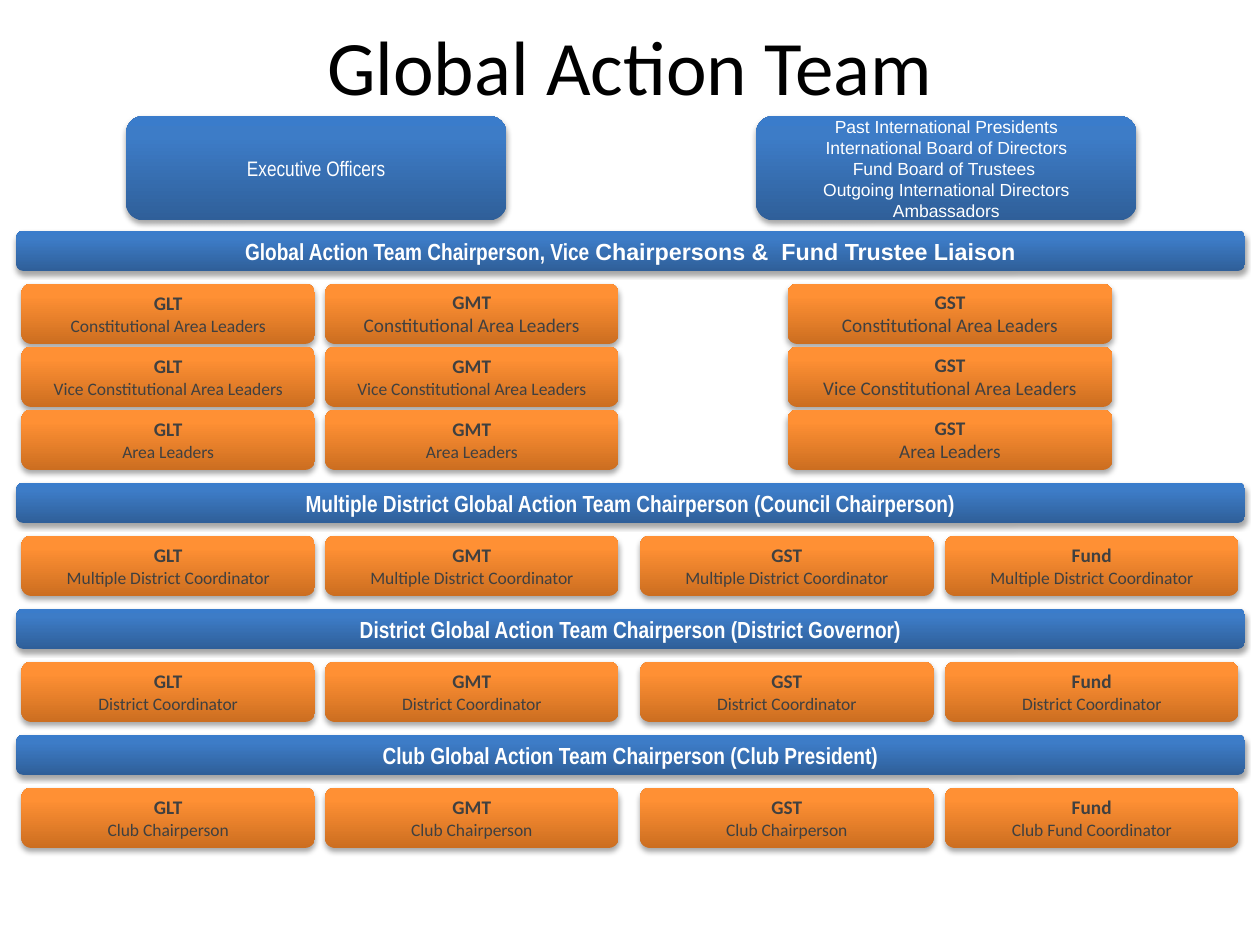
import copy

import pptx
import pptx.dml.color
import pptx.enum.shapes
import pptx.enum.text
import pptx.oxml
import pptx.oxml.ns
import pptx.util
from pptx.dml.color import RGBColor
from pptx.util import Inches

TITLE = "Global Action Team"
OFFICERS = ["Executive Officers"]
ADVISORS = [
    "Past International Presidents",
    "International Board of Directors",
    "Fund Board of Trustees ",
    "Outgoing International Directors",
    "Ambassadors",
]
AREA_TEAMS = ["GLT", "GMT", "GST"]
DISTRICT_TEAMS = ["GLT", "GMT", "GST", "Fund"]
SECTIONS = [
    {
        "chair": [("Global Action Team Chairperson, Vice ", "Arial Narrow"),
                  ("Chairpersons &  Fund Trustee Liaison", "Arial")],
        "teams": AREA_TEAMS,
        "columns": [(0.17, 2.33), (2.58, 2.33), (6.25, 2.58)],
        "rows": [
            (["Constitutional Area Leaders"] * 3, [10, 11, 11]),
            (["Vice Constitutional Area Leaders"] * 3, [10, 10, 11]),
            (["Area Leaders"] * 3, [10, 10, 11]),
        ],
    },
]
DISTRICT_COLUMNS = [(left, 2.33) for left in (0.17, 2.58, 5.08, 7.5)]
for chair, roles in [
    ("Multiple District Global Action Team Chairperson (Council Chairperson)",
     ["Multiple District Coordinator"] * 4),
    ("District Global Action Team Chairperson (District Governor)",
     ["District Coordinator"] * 4),
    ("Club Global Action Team Chairperson (Club President)",
     ["Club Chairperson"] * 3 + ["Club Fund Coordinator"]),
]:
    SECTIONS.append({
        "chair": [(chair, "Arial Narrow")],
        "teams": DISTRICT_TEAMS,
        "columns": DISTRICT_COLUMNS,
        "rows": [(roles, [10] * 4)],
    })

BLACK = RGBColor(0x00, 0x00, 0x00)
WHITE = RGBColor(0xFF, 0xFF, 0xFF)
CHARCOAL = RGBColor(0x40, 0x40, 0x40)
BLUES = [RGBColor(0x2F, 0x5F, 0x99), RGBColor(0x3D, 0x7C, 0xC7), RGBColor(0x3A, 0x7C, 0xCB)]
ORANGES = [RGBColor(0xCC, 0x6E, 0x20), RGBColor(0xFF, 0x90, 0x34), RGBColor(0xFF, 0x91, 0x36)]
STOP_POSITIONS = [0, 0.8, 1]
SHADOW = (
    '<a:outerShdw xmlns:a="http://schemas.openxmlformats.org/drawingml/2006/main" '
    'blurRad="40000" dist="23000" dir="5400000" rotWithShape="0">'
    '<a:srgbClr val="000000"><a:alpha val="35000"/></a:srgbClr></a:outerShdw>'
)

FIRST_CHAIR_TOP = 1.83
TEAM_OFFSET = 0.42
ROW_STEP = 0.5
HANGING = Inches(0.67)


def add_box(slide, left, top, width, height, colors):
    box = slide.shapes.add_shape(
        pptx.enum.shapes.MSO_SHAPE.ROUNDED_RECTANGLE,
        Inches(left), Inches(top), Inches(width), Inches(height))
    box.line.fill.background()
    box.fill.gradient()
    box.fill.gradient_angle = 90
    properties = box._element.spPr
    stop_list = properties.find(".//" + pptx.oxml.ns.qn("a:gsLst"))
    stop_list.append(copy.deepcopy(stop_list[-1]))
    for stop, position, color in zip(box.fill.gradient_stops, STOP_POSITIONS, colors):
        stop.position = position
        stop.color.rgb = color
    box.shadow.inherit = False
    properties.find(pptx.oxml.ns.qn("a:effectLst")).append(pptx.oxml.parse_xml(SHADOW))
    return box


def write(shape, paragraphs, color, hanging=False):
    frame = shape.text_frame
    frame.word_wrap = True
    frame.vertical_anchor = pptx.enum.text.MSO_ANCHOR.MIDDLE
    for index, runs in enumerate(paragraphs):
        paragraph = frame.add_paragraph() if index else frame.paragraphs[0]
        paragraph.alignment = pptx.enum.text.PP_ALIGN.CENTER
        if hanging:
            indents = paragraph._p.get_or_add_pPr()
            indents.set("marL", str(HANGING))
            indents.set("indent", str(-HANGING))
        for text, font, size, bold in runs:
            run = paragraph.add_run()
            run.text = text
            run.font.name = font
            run.font.size = pptx.util.Pt(size)
            run.font.bold = bold
            run.font.color.rgb = color


def add_team(slide, left, top, width, team, role, role_size):
    box = add_box(slide, left, top, width, 0.48, ORANGES)
    frame = box.text_frame
    frame.margin_left = frame.margin_right = Inches(0.13)
    frame.margin_top = frame.margin_bottom = Inches(0.07)
    write(box, [[(team, "Calibri", 11, True)], [(role, "Calibri", role_size, False)]],
          CHARCOAL, hanging=True)


def main():
    deck = pptx.Presentation()
    deck.slide_width = Inches(10)
    deck.slide_height = Inches(7.5)
    slide = deck.slides.add_slide(deck.slide_layouts[6])

    title = slide.shapes.add_textbox(Inches(0.5), Inches(-0.11), Inches(9), Inches(1.25))
    write(title, [[(TITLE, "Calibri", 44, False)]], BLACK)

    for left, lines, font, size, hanging in [
        (1, OFFICERS, "Arial Narrow", 12, True),
        (6, ADVISORS, "Arial", 10, False),
    ]:
        group = add_box(slide, left, 0.92, 3.02, 0.83, BLUES)
        write(group, [[(line, font, size, False)] for line in lines], WHITE, hanging)

    chair_top = FIRST_CHAIR_TOP
    for section in SECTIONS:
        chair = add_box(slide, 0.13, chair_top, 9.75, 0.32, BLUES)
        write(chair, [[(text, font, 13.3, True) for text, font in section["chair"]]], WHITE)
        for row, (roles, sizes) in enumerate(section["rows"]):
            team_top = chair_top + TEAM_OFFSET + row * ROW_STEP
            for (left, width), team, role, size in zip(
                    section["columns"], section["teams"], roles, sizes):
                add_team(slide, left, team_top, width, team, role, size)
        chair_top += ROW_STEP * (len(section["rows"]) + 1)

    deck.save("out.pptx")


if __name__ == "__main__":
    main()
